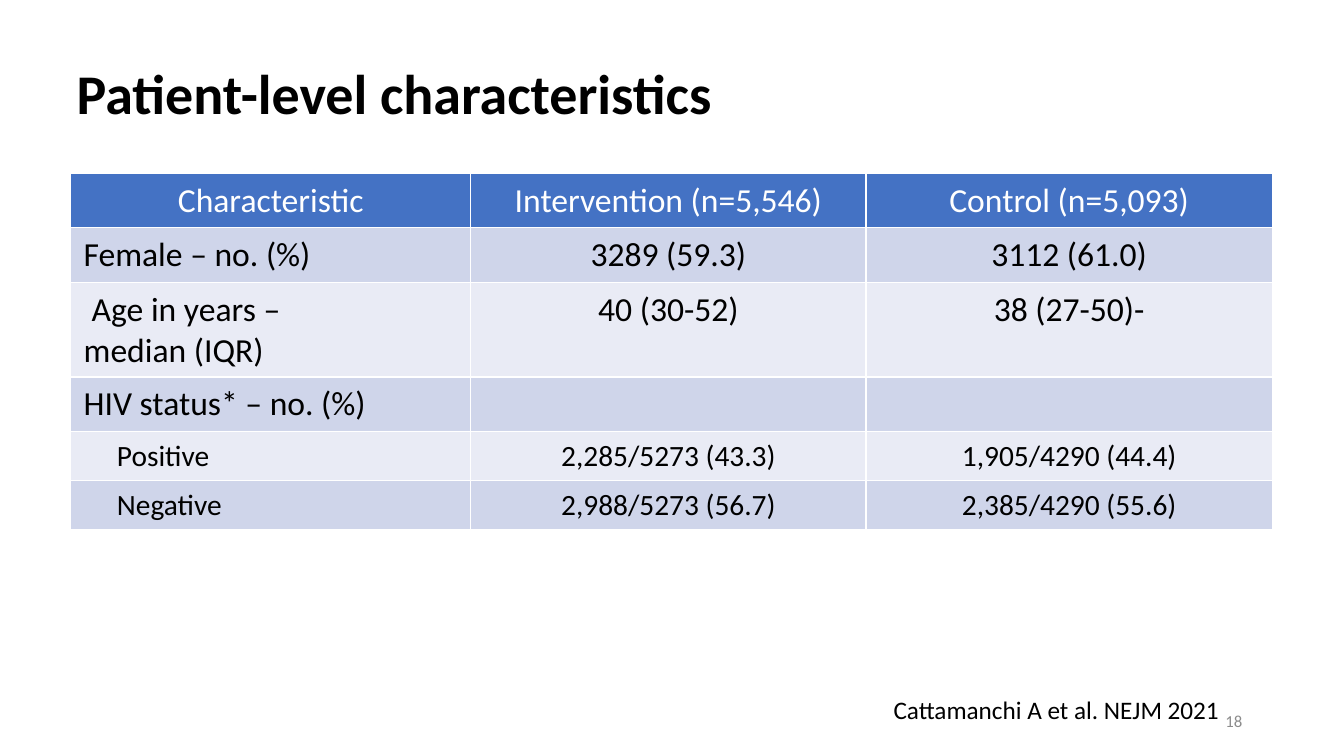
import pptx
import pptx.dml.color
import pptx.enum.text
import pptx.util

SCALE = 9144
FONT = "Calibri"
ALIGN = pptx.enum.text.PP_ALIGN
ANCHOR = pptx.enum.text.MSO_ANCHOR

COLUMN_WIDTHS = [397, 392, 403]
TABLE_ROWS = [
    (53, 24, 0, ["Characteristic", "Intervention (n=5,546)", "Control (n=5,093)"]),
    (53, 24, 0, ["Female – no. (%)", "3289 (59.3)", "3112 (61.0)"]),
    (93, 24, 8, ["Age in years –\nmedian (IQR)", "40 (30-52)", "38 (27-50)-"]),
    (53, 24, 0, ["HIV status* – no. (%)", "", ""]),
    (49, 21, 33, ["Positive", "2,285/5273 (43.3)", "1,905/4290 (44.4)"]),
    (49, 21, 33, ["Negative", "2,988/5273 (56.7)", "2,385/4290 (55.6)"]),
]


def px(length):
    return pptx.util.Emu(length * SCALE)


def color(value):
    return pptx.dml.color.RGBColor.from_string(value)


def format_text(text_frame, size, text_color, align, bold=False):
    for paragraph in text_frame.paragraphs:
        paragraph.alignment = align
        for run in paragraph.runs:
            run.font.name = FONT
            run.font.size = pptx.util.Pt(size)
            run.font.bold = bold
            run.font.color.rgb = color(text_color)


def set_title(slide, text):
    title = slide.shapes.title
    title.left, title.top, title.width, title.height = map(px, (66, 64, 1192, 67))
    text_frame = title.text_frame
    text_frame.text = text
    text_frame.vertical_anchor = ANCHOR.BOTTOM
    text_frame.paragraphs[0].line_spacing = 0.9
    format_text(text_frame, 40, "000000", ALIGN.LEFT, bold=True)


def add_label(slide, box, text, size, text_color, anchor):
    text_frame = slide.shapes.add_textbox(*map(px, box)).text_frame
    text_frame.word_wrap = True
    text_frame.vertical_anchor = anchor
    text_frame.text = text
    format_text(text_frame, size, text_color, ALIGN.RIGHT)


def fill_cell(cell, text, size, fill, text_color, align, indent):
    cell.fill.solid()
    cell.fill.fore_color.rgb = color(fill)
    cell.margin_left = cell.margin_right = px(13)
    cell.margin_top = cell.margin_bottom = px(7)
    cell.text_frame.text = text
    if indent:
        properties = cell.text_frame.paragraphs[0]._p.get_or_add_pPr()
        properties.set("marL", str(px(indent)))
        properties.set("indent", "0")
    format_text(cell.text_frame, size, text_color, align)


def add_characteristics_table(slide, left, top):
    width = sum(COLUMN_WIDTHS)
    height = sum(row[0] for row in TABLE_ROWS)
    table = slide.shapes.add_table(
        len(TABLE_ROWS), len(COLUMN_WIDTHS), px(left), px(top), px(width), px(height)
    ).table
    for column, column_width in zip(table.columns, COLUMN_WIDTHS):
        column.width = px(column_width)
    for row_index, (row_height, size, indent, texts) in enumerate(TABLE_ROWS):
        table.rows[row_index].height = px(row_height)
        is_header = row_index == 0
        band = "CFD5EA" if row_index % 2 else "E9EBF5"
        fill = "4472C4" if is_header else band
        text_color = "FFFFFF" if is_header else "000000"
        for column_index, text in enumerate(texts):
            is_label = column_index == 0 and not is_header
            fill_cell(
                table.cell(row_index, column_index), text, size, fill, text_color,
                ALIGN.LEFT if is_label else ALIGN.CENTER, indent if is_label else 0,
            )


def main():
    presentation = pptx.Presentation()
    presentation.slide_width = px(1333)
    presentation.slide_height = px(750)
    slide = presentation.slides.add_slide(presentation.slide_layouts[5])
    add_label(slide, (942, 695, 300, 40), "18", 12, "8C8C8C", ANCHOR.MIDDLE)
    set_title(slide, "Patient-level characteristics")
    add_characteristics_table(slide, 70, 172)
    add_label(slide, (683, 684, 536, 40), "Cattamanchi A et al. NEJM 2021", 18, "000000", ANCHOR.TOP)
    presentation.save("out.pptx")


if __name__ == "__main__":
    main()
